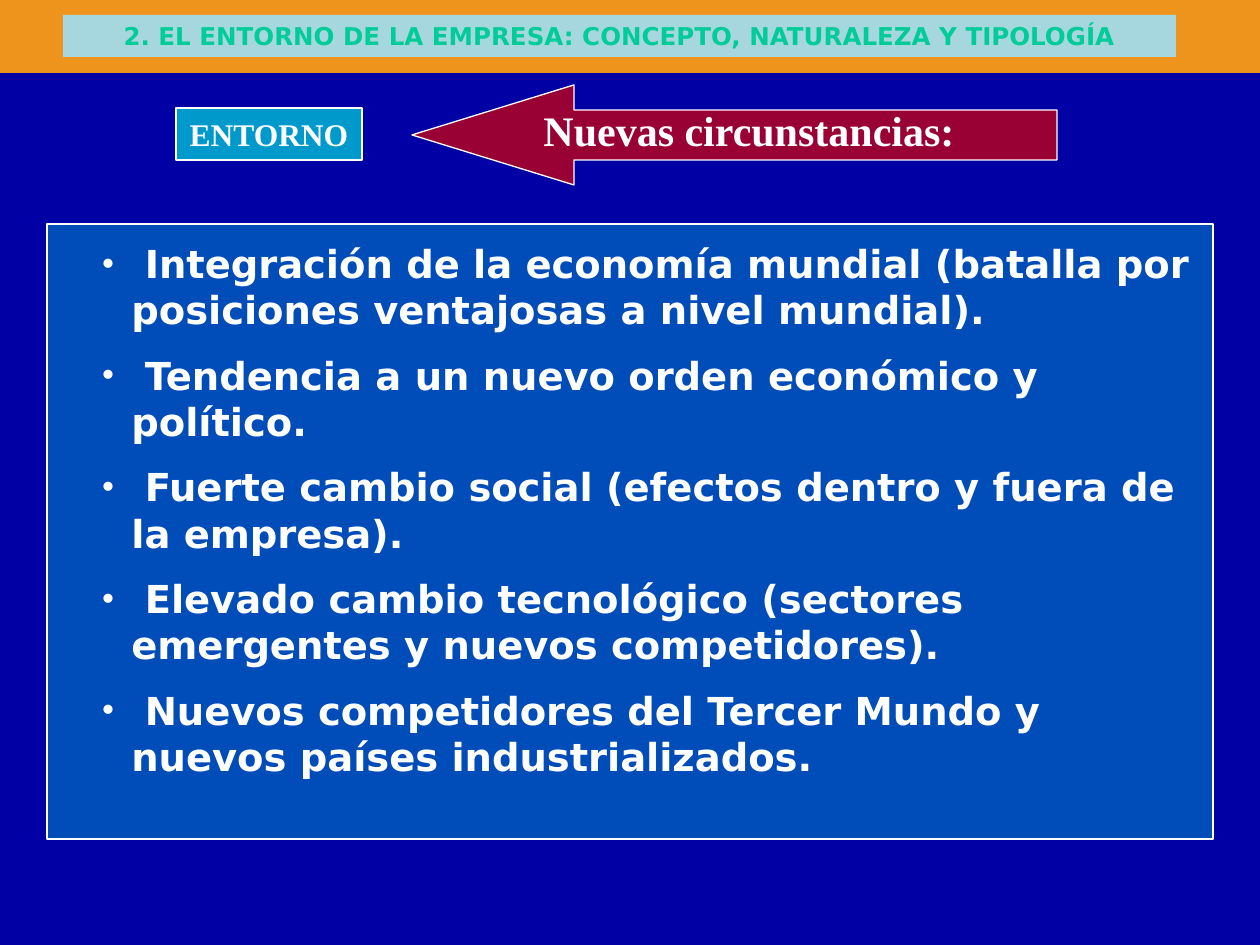
from lxml.etree import SubElement
from pptx import Presentation
from pptx.dml.color import RGBColor
from pptx.enum.shapes import MSO_SHAPE
from pptx.enum.text import MSO_ANCHOR, PP_ALIGN
from pptx.oxml.ns import qn
from pptx.util import Emu, Pt

SCALE = 914400 / 126  # EMU in one px
COLORS = {
    "background": "0000A4",
    "band": "EE941C",
    "title_fill": "A6D7DE",
    "title_text": "00CC99",
    "arrow": "990033",
    "cyan": "0099CC",
    "white": "FFFFFF",
}
SANS = "DejaVu Sans"
SERIF = "Times New Roman"
CIRCUMSTANCES = [
    " Integración de la economía mundial (batalla por posiciones ventajosas a nivel mundial).",
    " Tendencia a un nuevo orden económico y político.",
    " Fuerte cambio social (efectos dentro y fuera de la empresa).",
    " Elevado cambio tecnológico (sectores emergentes y nuevos competidores).",
    " Nuevos competidores del Tercer Mundo y nuevos países industrializados.",
]


def px(length):
    return Emu(round(length * SCALE))


def color(name):
    return RGBColor.from_string(COLORS[name])


def add_block(page, area, fill, kind=MSO_SHAPE.RECTANGLE, line=None, opacity=None):
    """Add a filled preset shape, with an outline if a line colour is given."""
    shape = page.shapes.add_shape(kind, *map(px, area))
    shape.shadow.inherit = False
    shape.fill.solid()
    shape.fill.fore_color.rgb = color(fill)
    if opacity is not None:
        tint = shape.fill._xPr.find(".//" + qn("a:srgbClr"))
        SubElement(tint, qn("a:alpha"), val=str(opacity * 1000))
    if line:
        shape.line.color.rgb = color(line)
        shape.line.width = Pt(0.75)
    else:
        shape.line.fill.background()
    return shape


def add_bullet(para, indent):
    properties = para._p.get_or_add_pPr()
    properties.set("marL", str(px(indent)))
    properties.set("indent", str(-px(indent)))
    SubElement(properties, qn("a:buFont"), typeface=SERIF)
    SubElement(properties, qn("a:buChar"), char="•")


def write(box, lines, size, font=SANS, fill="white", align=PP_ALIGN.CENTER,
          anchor=MSO_ANCHOR.TOP, wrap=True, indent=None, gap=0):
    """Write bold paragraphs, bulleted if an indent is given."""
    frame = box.text_frame
    frame.word_wrap = wrap
    frame.vertical_anchor = anchor
    for index, line in enumerate(lines):
        para = frame.paragraphs[0] if index == 0 else frame.add_paragraph()
        para.alignment = align
        if index:
            para.space_before = Pt(gap)
        if indent:
            add_bullet(para, indent)
        span = para.add_run()
        span.text = line
        span.font.name = font
        span.font.size = Pt(size)
        span.font.bold = True
        span.font.color.rgb = color(fill)


def add_text(page, area, lines, **style):
    write(page.shapes.add_textbox(*map(px, area)), lines, **style)


def main():
    deck = Presentation()
    deck.slide_width, deck.slide_height = px(1260), px(945)
    page = deck.slides.add_slide(deck.slide_layouts[6])
    page.background.fill.solid()
    page.background.fill.fore_color.rgb = color("background")

    # Arrow pointing at the environment
    arrow = add_block(page, (412, 85, 645, 100), "arrow", MSO_SHAPE.LEFT_ARROW, "white")
    arrow.adjustments[0], arrow.adjustments[1] = 0.5, 1.62

    # Heading band
    add_block(page, (0, 0, 1260, 73), "band")
    title = add_block(page, (63, 15, 1113, 42), "title_fill")
    write(title, ["2. EL ENTORNO DE LA EMPRESA: CONCEPTO, NATURALEZA Y TIPOLOGÍA"],
          size=14, fill="title_text")

    # Environment and arrow labels
    environment = add_block(page, (176, 108, 186, 52), "cyan", line="white")
    write(environment, ["ENTORNO"], size=18, font=SERIF,
          anchor=MSO_ANCHOR.MIDDLE, wrap=False)
    add_text(page, (412, 98, 674, 63), ["Nuevas circunstancias:"], size=24, font=SERIF)

    # Panel with the new circumstances
    add_block(page, (47, 224, 1166, 615), "cyan", line="white", opacity=50)
    add_text(page, (89, 234, 1113, 567), CIRCUMSTANCES, size=22,
             align=PP_ALIGN.LEFT, indent=30, gap=11)

    deck.save("out.pptx")


if __name__ == "__main__":
    main()
